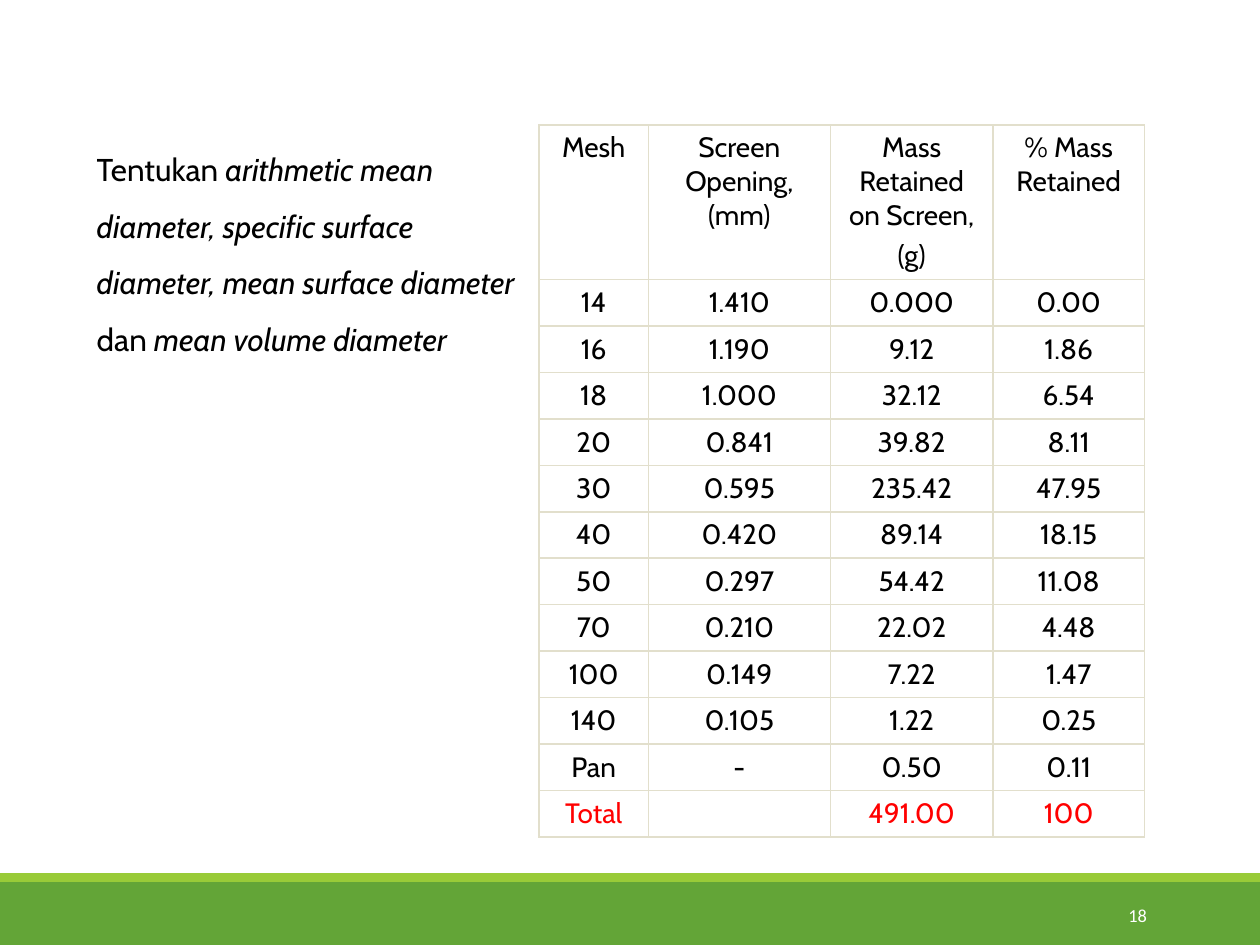
from dataclasses import dataclass

from lxml import etree
from pptx import Presentation
from pptx.dml.color import RGBColor
from pptx.enum.shapes import MSO_SHAPE
from pptx.enum.text import MSO_ANCHOR, PP_ALIGN
from pptx.oxml import parse_xml
from pptx.oxml.ns import nsdecls
from pptx.util import Pt

RECT = MSO_SHAPE.RECTANGLE
MIDDLE = MSO_ANCHOR.MIDDLE
CENTER, RIGHT = PP_ALIGN.CENTER, PP_ALIGN.RIGHT


@dataclass
class Theme:
    green: str = "63A537"
    lime: str = "99CB38"
    rule: str = "E2DFCC"
    ink: str = "000000"
    red: str = "FF0000"
    white: str = "FFFFFF"
    body: str = "Cabin"
    foot: str = "Calibri"
    task: float = 18
    cell: float = 16
    page: float = 10.5


theme = Theme()


def add_run(para, text, size, color, face=theme.body, italic=False):
    run = para.add_run()
    run.text = text
    font = run.font
    font.name, font.size, font.italic = face, Pt(size), italic
    font.color.rgb = RGBColor.from_string(color)


def add_rules(cell):
    """Draw the thin border on all four sides of a cell."""
    props = cell._tc.get_or_add_tcPr()
    for spot, side in enumerate("LRTB"):
        line = parse_xml(f'<a:ln{side} {nsdecls("a")} w="{Pt(1)}"/>')
        fill = etree.SubElement(line, line.tag.split("}")[0] + "}solidFill")
        etree.SubElement(fill, line.tag.split("}")[0] + "}srgbClr", val=theme.rule)
        props.insert(spot, line)


deck = Presentation()
deck.slide_width, deck.slide_height = Pt(720), Pt(540)
slide = deck.slides.add_slide(deck.slide_layouts[6])
shapes = slide.shapes

# Footer bands and page number
for top, height, color in [(504, 36, theme.green), (499, 5, theme.lime)]:
    band = shapes.add_shape(RECT, 0, Pt(top), Pt(720), Pt(height))
    band.shadow.inherit = False
    band.fill.solid()
    band.fill.fore_color.rgb = RGBColor.from_string(color)
    band.line.fill.background()

page = shapes.add_textbox(Pt(584.6), Pt(508.6), Pt(77.8), Pt(28.8)).text_frame
page.word_wrap = True
page.vertical_anchor = MIDDLE
para = page.paragraphs[0]
para.alignment = RIGHT
add_run(para, "18", theme.page, theme.white, theme.foot)

# Sieve table
head = [
    ["Mesh"],
    ["Screen Opening, (mm)"],
    ["Mass Retained on Screen,", "(g)"],
    ["% Mass Retained"],
]
data = [
    ("14", "1.410", "0.000", "0.00"),
    ("16", "1.190", "9.12", "1.86"),
    ("18", "1.000", "32.12", "6.54"),
    ("20", "0.841", "39.82", "8.11"),
    ("30", "0.595", "235.42", "47.95"),
    ("40", "0.420", "89.14", "18.15"),
    ("50", "0.297", "54.42", "11.08"),
    ("70", "0.210", "22.02", "4.48"),
    ("100", "0.149", "7.22", "1.47"),
    ("140", "0.105", "1.22", "0.25"),
    ("Pan", "-", "0.50", "0.11"),
    ("Total", "", "491.00", "100"),
]
rows = [head] + [[[text] for text in row] for row in data]
widths = [62.5, 104, 93, 86.5]
first, step = 88.5, 26.55

table = shapes.add_table(
    len(rows), len(widths), Pt(308), Pt(71.3),
    Pt(sum(widths)), Pt(first + step * len(data)),
).table
table.first_row = table.horz_banding = False
for col, width in zip(table.columns, widths):
    col.width = Pt(width)

for r, row in enumerate(rows):
    table.rows[r].height = Pt(step if r else first)
    color = theme.red if row[0] == ["Total"] else theme.ink
    for c, lines in enumerate(row):
        cell = table.cell(r, c)
        cell.fill.background()
        add_rules(cell)
        if lines == [""]:
            cell.margin_top = cell.margin_bottom = 0
            continue
        for n, text in enumerate(lines):
            frame = cell.text_frame
            para = frame.add_paragraph() if n else frame.paragraphs[0]
            para.alignment = CENTER
            if n:
                para.space_before = Pt(0.2 * theme.cell)
            add_run(para, text, theme.cell, color)

# Task
task = shapes.add_textbox(Pt(48.2), Pt(71.3), Pt(260), Pt(170.6)).text_frame
task.word_wrap = True
para = task.paragraphs[0]
para.line_spacing = 1.5
for text, italic in [
    ("Tentukan", False),
    (" arithmetic mean diameter, specific surface diameter, "
     "mean surface diameter ", True),
    ("dan ", False),
    ("mean volume diameter", True),
]:
    add_run(para, text, theme.task, theme.ink, italic=italic)

deck.save("out.pptx")
